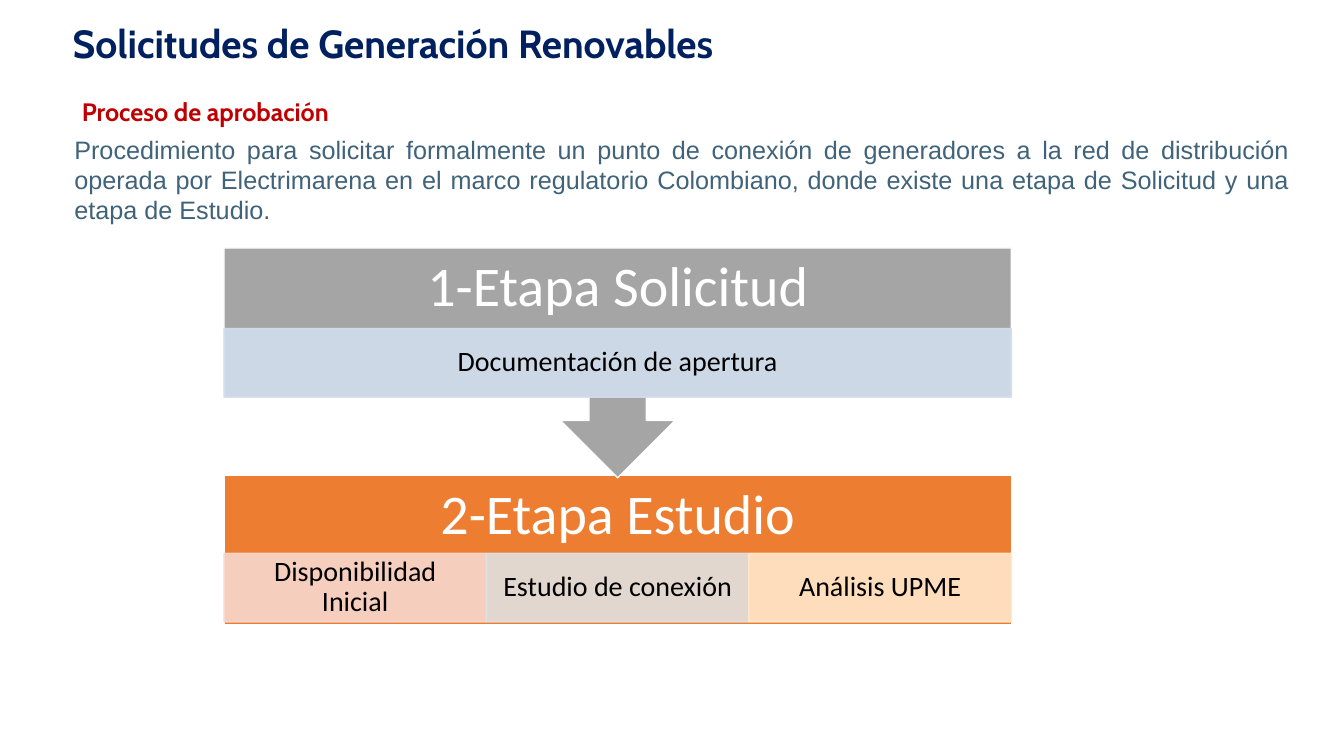
from dataclasses import dataclass

from lxml import etree
from pptx import Presentation
from pptx.dml.color import RGBColor
from pptx.enum.shapes import MSO_SHAPE
from pptx.enum.text import MSO_ANCHOR, PP_ALIGN
from pptx.oxml.ns import qn
from pptx.util import Inches, Pt

RECT, CALLOUT = MSO_SHAPE.RECTANGLE, MSO_SHAPE.UP_ARROW_CALLOUT
TOP, MIDDLE = MSO_ANCHOR.TOP, MSO_ANCHOR.MIDDLE
LEFT, CENTER, JUSTIFY = PP_ALIGN.LEFT, PP_ALIGN.CENTER, PP_ALIGN.JUSTIFY

WIDE, HIGH = Inches(13.33), Inches(7.5)
COLS, ROWS = 120, 75
STAGE_X, STAGE_W = 20, 70.3
HEAD_H, CHIP_H = 8, 6.8


@dataclass(frozen=True)
class Style:
    font: str
    size: int
    color: str
    bold: bool = False


class Theme:
    title = Style("Cabin", 28, "002060", True)
    subtitle = Style("Cabin", 18, "C00000", True)
    body = Style("Arial", 18, "40637A")
    head = Style("Calibri", 40, "FFFFFF")
    chip = Style("Calibri", 20, "000000")
    edge = "FFFFFF"
    gray = "A5A5A5"
    orange = "ED7D31"
    blue = "D2DEEF"
    rose = "F8D7CE"
    silver = "E1E1E1"
    cream = "FFE8CC"


def place(x, y, w, h):
    """Turn grid columns and rows into slide lengths."""
    return (round(x * WIDE / COLS), round(y * HIGH / ROWS),
            round(w * WIDE / COLS), round(h * HIGH / ROWS))


def write(shape, text, style, align=LEFT, anchor=TOP, pad=0.1, lines=0.9):
    frame = shape.text_frame
    frame.word_wrap = True
    frame.vertical_anchor = anchor
    frame.margin_left = frame.margin_right = Inches(pad)
    para = frame.paragraphs[0]
    para.alignment = align
    para.line_spacing = lines
    run = para.add_run()
    run.text = text
    font = run.font
    font.name, font.size, font.bold = style.font, Pt(style.size), style.bold
    font.color.rgb = RGBColor.from_string(style.color)


def add_text(slide, cell, text, style, **look):
    box = slide.shapes.add_textbox(*place(*cell))
    write(box, text, style, **look)


def add_block(slide, kind, cell, fill, edge):
    block = slide.shapes.add_shape(kind, *place(*cell))
    block.shadow.inherit = False
    block.fill.solid()
    block.fill.fore_color.rgb = RGBColor.from_string(fill)
    block.line.color.rgb = RGBColor.from_string(edge)
    block.line.width = Pt(1)
    return block


def fade(block, share):
    """Set the opacity of fill and line, in percent."""
    for color in block.fill._xPr.iter(qn("a:srgbClr")):
        etree.SubElement(color, qn("a:alpha")).set("val", str(share * 1000))


def add_stage(slide, kind, y, h, fill, title, chip_y, chips, turn=0):
    """Draw a stage: block, heading and a row of equal chips."""
    block = add_block(slide, kind, (STAGE_X, y, STAGE_W, h), fill, Theme.edge)
    block.rotation = turn
    add_text(slide, (STAGE_X, y, STAGE_W, HEAD_H), title, Theme.head,
             align=CENTER, anchor=MIDDLE)
    width = STAGE_W / len(chips)
    for i, (text, color) in enumerate(chips):
        cell = (STAGE_X + i * width, chip_y, width, CHIP_H)
        chip = add_block(slide, RECT, cell, color, color)
        fade(chip, 90)
        write(chip, text, Theme.chip, align=CENTER, anchor=MIDDLE, pad=0.16)
        chip.text_frame.margin_top = chip.text_frame.margin_bottom = Inches(0.03)


def main():
    deck = Presentation()
    deck.slide_width, deck.slide_height = WIDE, HIGH
    slide = deck.slides.add_slide(deck.slide_layouts[6])

    add_text(slide, (5.6, 0, 88.8, 9.1), "Solicitudes de Generación Renovables",
             Theme.title, anchor=MIDDLE)
    add_text(slide, (5.6, 9.4, 88.8, 3), "Proceso de aprobación",
             Theme.subtitle, pad=0.19)
    add_text(slide, (5.75, 12.8, 110.25, 10.1),
             "Procedimiento para solicitar formalmente un punto de conexión de "
             "generadores a la red de distribución operada por Electrimarena en "
             "el marco regulatorio Colombiano, donde existe una etapa de "
             "Solicitud y una etapa de Estudio.",
             Theme.body, align=JUSTIFY, lines=1.0)

    add_stage(slide, RECT, 47.2, 14.8, Theme.orange, "2-Etapa Estudio", 54.9,
              [("Disponibilidad Inicial", Theme.rose),
               ("Estudio de conexión", Theme.silver),
               ("Análisis UPME", Theme.cream)])
    add_stage(slide, CALLOUT, 24.6, 22.8, Theme.gray, "1-Etapa Solicitud", 32.6,
              [("Documentación de apertura", Theme.blue)], turn=180)

    deck.save("out.pptx")


if __name__ == "__main__":
    main()
